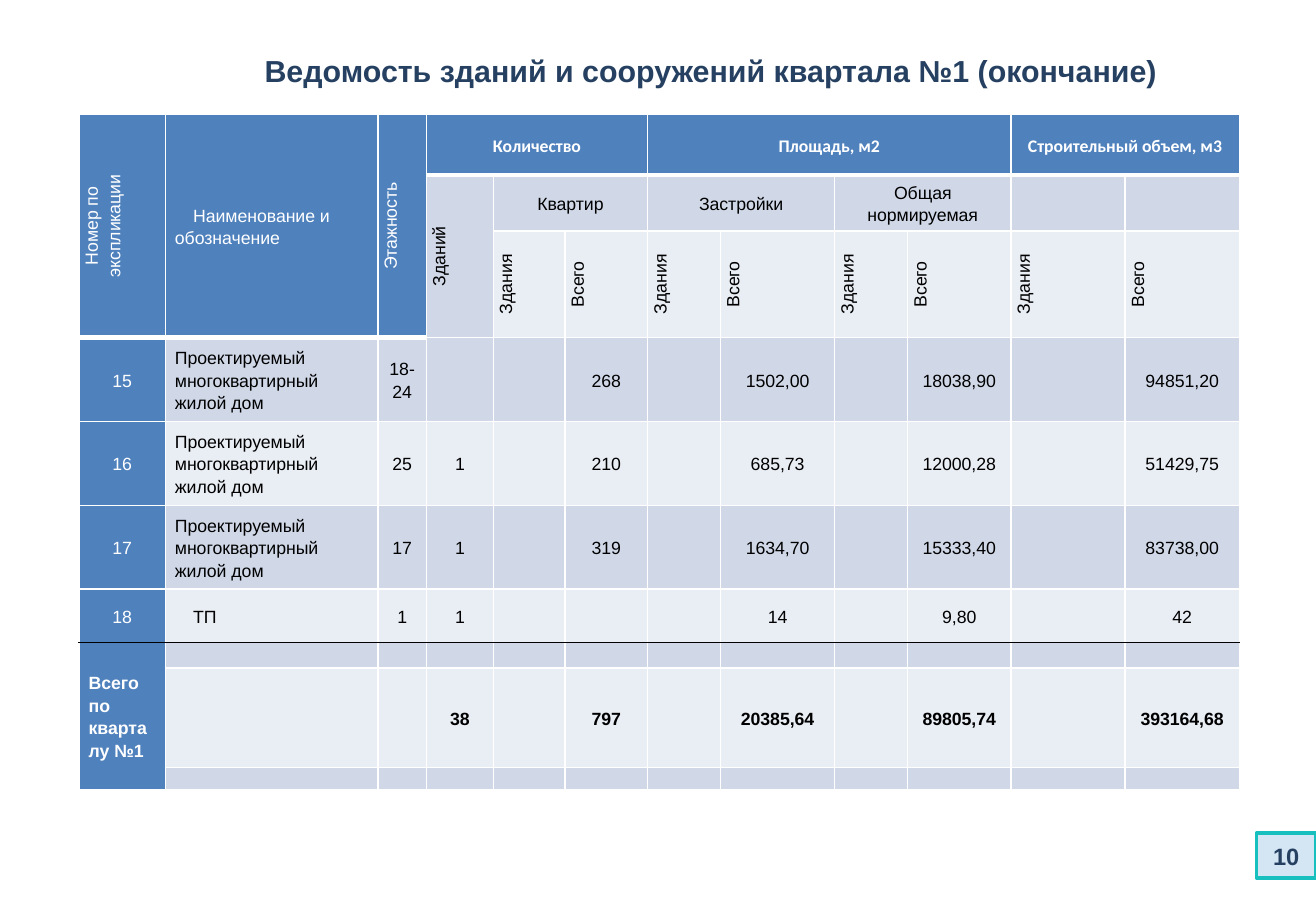
from lxml import etree
from pptx import Presentation
from pptx import util as u
from pptx.dml.color import RGBColor
from pptx.enum import shapes, text
from pptx.oxml.ns import qn

NAVY = RGBColor(0x25, 0x40, 0x61)
TEAL = RGBColor(0x17, 0xBF, 0xBF)
PALE_BLUE = RGBColor(0xD4, 0xE5, 0xF4)
HEADER_BLUE = RGBColor(0x4F, 0x81, 0xBD)
BANDS = (RGBColor(0xE9, 0xED, 0xF4), RGBColor(0xD0, 0xD8, 0xE8))
WHITE = RGBColor(0xFF, 0xFF, 0xFF)
BLACK = RGBColor(0, 0, 0)

CENTER, LEFT = text.PP_ALIGN.CENTER, text.PP_ALIGN.LEFT
MIDDLE = text.MSO_ANCHOR.MIDDLE

GRID = u.Inches(0.01)  # one column or row of the page grid
PAGE = (1083, 750)
COLUMNS = [71, 175, 40, 55, 59, 68, 60, 94, 60, 85, 94, 94]
ROWS = [50, 46, 88, 69, 69, 69, 44, 21, 82, 18]

HOUSE = "Проектируемый многоквартирный жилой дом"
HEADINGS = {
    (0, 0): "Номер по\nэкспликации", (0, 1): "Наименование и обозначение",
    (0, 2): "Этажность", (0, 3): "Количество", (0, 6): "Площадь, м2",
    (0, 10): "Строительный объем, м3", (1, 3): "Зданий", (1, 4): "Квартир",
    (1, 6): "Застройки", (1, 8): "Общая нормируемая",
}
HEADINGS.update({(2, col): ("Здания", "Всего")[col % 2] for col in range(4, 12)})
BUILDINGS = {
    3: ("15", HOUSE, "18-24", "", "268", "1502,00", "18038,90", "94851,20"),
    4: ("16", HOUSE, "25", "1", "210", "685,73", "12000,28", "51429,75"),
    5: ("17", HOUSE, "17", "1", "319", "1634,70", "15333,40", "83738,00"),
    6: ("18", "ТП", "1", "1", "", "14", "9,80", "42"),
    7: ("Всего по кварталу №1", "", "", "", "", "", "", ""),
    8: ("", "", "", "38", "797", "20385,64", "89805,74", "393164,68"),
}
FILLED_COLUMNS = (0, 1, 2, 3, 5, 7, 9, 11)
WORDS = HEADINGS | {(row, col): value for row, values in BUILDINGS.items()
                    for col, value in zip(FILLED_COLUMNS, values)}
# first cell: (rows, columns) it covers
SPANS = {
    (0, 0): (3, 1), (0, 1): (3, 1), (0, 2): (3, 1), (0, 3): (1, 3),
    (0, 6): (1, 4), (0, 10): (1, 2), (1, 3): (2, 1), (1, 4): (1, 2),
    (1, 6): (1, 2), (1, 8): (1, 2), (7, 0): (3, 1),
}
UPRIGHT = {(0, 0), (0, 2), (1, 3)} | {(2, col) for col in range(4, 12)}
INDENTED = {(0, 1), (6, 1)}


def assign(target, values):
    for name, value in values.items():
        setattr(target, name, value)


def line_below(row, col):
    """Colour and width in points of the table line under a row."""
    if row == 6:
        return BLACK, 1
    return WHITE, 3 if row == (2 if col < 3 else 0) else 1


class Sheet:
    def __init__(self, deck):
        self.font = {"name": "Arial", "size": u.Pt(10.5), "bold": False}
        self.page = deck.slides.add_slide(deck.slide_layouts[5])

    def fill_text(self, frame, words, para_format, color, **font):
        frame.text = words
        for para in frame.paragraphs:
            assign(para, para_format)
            for span in para.runs:
                assign(span.font, self.font | font)
                span.font.color.rgb = color

    def title(self, words, *box):
        title = self.page.shapes.title
        assign(title, dict(zip(("left", "top", "width", "height"), (n * GRID for n in box))))
        assign(title.text_frame, {"word_wrap": True, "vertical_anchor": text.MSO_ANCHOR.TOP,
                                  "auto_size": text.MSO_AUTO_SIZE.NONE})
        self.fill_text(title.text_frame, words, {"alignment": CENTER}, NAVY,
                       size=u.Pt(18), bold=True)

    def badge(self, words, *box):
        badge = self.page.shapes.add_shape(shapes.MSO_SHAPE.RECTANGLE,
                                           *(n * GRID for n in box))
        badge.shadow.inherit = False
        badge.fill.solid()
        badge.fill.fore_color.rgb = PALE_BLUE
        badge.line.color.rgb = TEAL
        badge.line.width = u.Pt(2)
        badge.text_frame.vertical_anchor = MIDDLE
        self.fill_text(badge.text_frame, words, {"alignment": CENTER}, NAVY,
                       size=u.Pt(14), bold=True)

    def table(self, left, top):
        table = self.page.shapes.add_table(
            len(ROWS), len(COLUMNS), left * GRID, top * GRID,
            sum(COLUMNS) * GRID, sum(ROWS) * GRID).table
        for column, width in zip(table.columns, COLUMNS):
            column.width = width * GRID
        for row, height in zip(table.rows, ROWS):
            row.height = height * GRID
        for (row, col), (height, width) in SPANS.items():
            table.cell(row, col).merge(table.cell(row + height - 1, col + width - 1))
        for row in range(len(ROWS)):
            for col in range(len(COLUMNS)):
                self.cell(table.cell(row, col), row, col)

    def cell(self, cell, row, col):
        is_header = row == 0 or col == 0
        is_group = row == 0 and col > 2
        last_row = row + SPANS.get((row, col), (1, 1))[0] - 1
        self.border(cell, "L", WHITE, 1)
        self.border(cell, "R", WHITE, 1)
        self.border(cell, "T", *line_below(row - 1, col))
        self.border(cell, "B", *line_below(last_row, col))
        cell.fill.solid()
        cell.fill.fore_color.rgb = HEADER_BLUE if is_header else BANDS[row % 2]
        assign(cell, {"margin_left": 8 * GRID, "margin_right": 8 * GRID,
                      "margin_top": 0, "margin_bottom": 0, "vertical_anchor": MIDDLE})
        words = WORDS.get((row, col), "")
        if not words:
            etree.SubElement(cell.text_frame.paragraphs[0]._p, qn("a:endParaRPr"), sz="1050")
            return
        align = LEFT if col == 1 or (row, col) == (7, 0) else CENTER
        self.fill_text(cell.text_frame, words, {"alignment": align, "line_spacing": 1.15},
                       WHITE if is_header else BLACK, bold=is_group or row > 6,
                       name="Calibri" if is_group else "Arial")
        if (row, col) in UPRIGHT:
            cell._tc.get_or_add_tcPr().set("vert", "vert270")
        if (row, col) in INDENTED:
            cell.text_frame.paragraphs[0]._p.get_or_add_pPr().set("indent", str(15 * GRID))

    def border(self, cell, side, color, points):
        line = etree.SubElement(cell._tc.get_or_add_tcPr(), qn("a:ln" + side),
                                w=str(u.Pt(points)))
        fill = etree.SubElement(line, qn("a:solidFill"))
        etree.SubElement(fill, qn("a:srgbClr"), val=str(color))


def main():
    deck = Presentation()
    deck.slide_width, deck.slide_height = (n * GRID for n in PAGE)
    sheet = Sheet(deck)
    sheet.badge("10", 1034, 686, 49, 37)
    sheet.table(65, 94)
    sheet.title("Ведомость зданий и сооружений квартала №1 (окончание)", 167, 38, 836, 40)
    deck.save("out.pptx")


if __name__ == "__main__":
    main()
